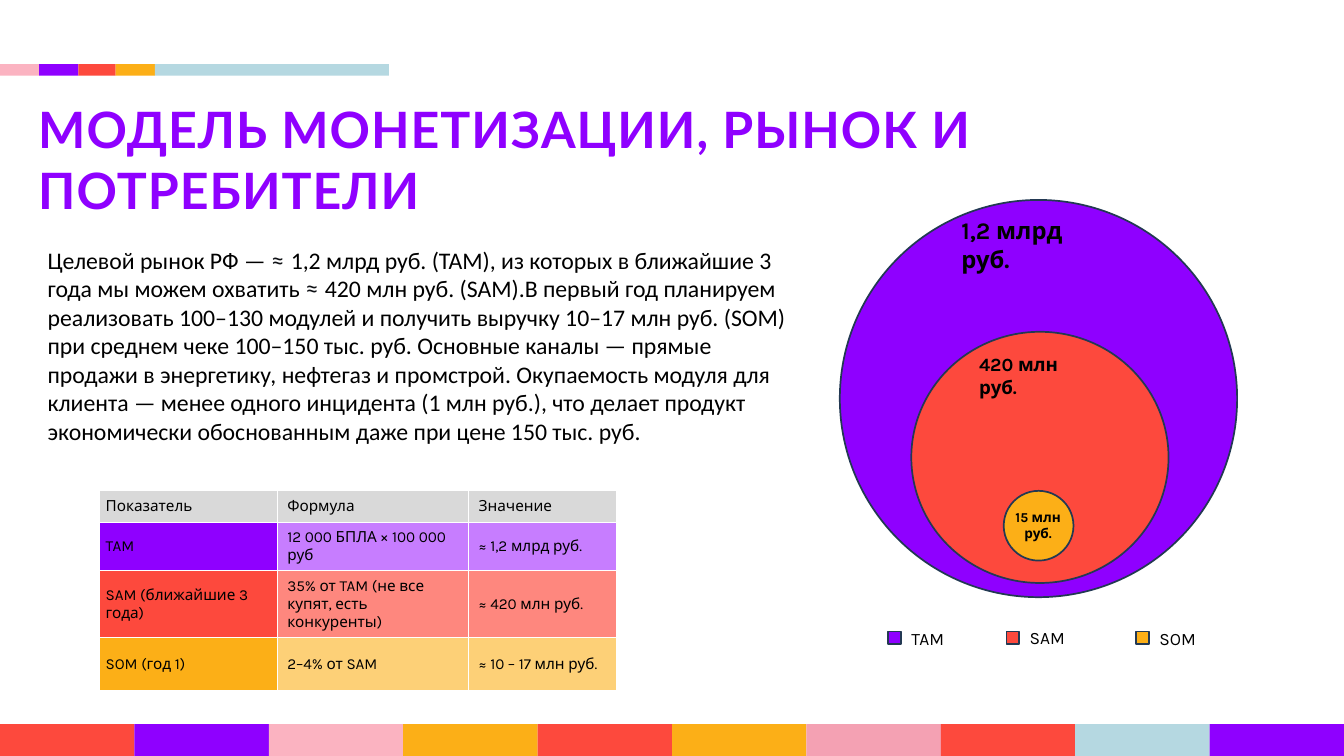
from pptx import Presentation
from pptx.dml.color import RGBColor as RGB
from pptx.enum.shapes import MSO_SHAPE as Kind
from pptx.enum.text import MSO_ANCHOR as Anchor, MSO_AUTO_SIZE as Auto, PP_ALIGN as Align
from pptx.oxml import parse_xml
from pptx.oxml.ns import nsdecls
from pptx.util import Cm, Pt

HUES = {
    "violet": "8F00FF", "red": "FD493D", "amber": "FCAF17",
    "pink": "FBB3C1", "rose": "F4A1B3", "sky": "B5D8E1",
    "lilac": "C77DFF", "coral": "FE877E", "sand": "FDD077",
    "grey": "D9D9D9", "navy": "233953", "white": "FFFFFF",
    "black": "000000", "ink": "0F1115",
}
WIDTH, HEIGHT = 55.85, 31.42

# Stripes: (width, colour) on top, equal tiles at the bottom
TOP = [(1.63, "pink"), (1.63, "violet"), (1.55, "red"), (1.63, "amber"), (9.72, "sky")]
BASE = ["red", "violet", "pink", "amber", "red", "amber", "rose", "red", "sky", "violet"]

# Market circles: left, top, width, height, colour
RINGS = [
    (34.9, 8.31, 16.51, 16.51, "violet"),
    (37.87, 13.79, 10.69, 10.44, "red"),
    (41.71, 20.4, 2.9, 2.9, "amber"),
]
# Circle labels: text, box, size, alignment
SUMS = [
    ("1,2 млрд руб.", (39.7, 8.86, 6.7, 1.45), 28, Align.LEFT),
    ("420 млн руб.", (40.44, 14.55, 5.4, 1.19), 22, Align.LEFT),
    ("15 млн руб.", (41.88, 21.03, 2.52, 1.63), 16, Align.CENTER),
]
# Legend: text, marker left, text top, colour
KEYS = [("TAM", 36.91, 26.09, "violet"), ("SAM", 41.83, 26.04, "red"),
        ("SOM", 47.22, 26.09, "amber")]

# Table rows: texts, height, first fill, other fill
ROWS = [
    (("Показатель", "Формула", "Значение"), 1.29, "grey", "grey"),
    (("TAM", "12 000 БПЛА × 100 000 руб", "≈ 1,2 млрд руб."), 2.03, "violet", "lilac"),
    (("SAM (ближайшие 3 года)", "35% от TAM (не все купят, есть конкуренты)",
      "≈ 420 млн руб."), 2.77, "red", "coral"),
    (("SOM (год 1)", "2–4% от SAM", "≈ 10 – 17 млн руб."), 2.18, "amber", "sand"),
]
COLS = (7.37, 7.95, 6.15)

STORY = [
    "Целевой рынок РФ — ",
    "≈ ",
    "1,2 млрд руб. (TAM), из которых в ближайшие 3 года мы можем охватить ",
    "≈ ",
    "420 млн руб. (SAM).В первый год планируем реализовать 100–130 модулей и получить "
    "выручку 10–17 млн руб. (SOM) при среднем чеке 100–150 тыс. руб. Основные каналы — "
    "прямые продажи в энергетику, нефтегаз и промстрой. Окупаемость модуля для клиента — "
    "менее одного инцидента (1 млн руб.), что делает продукт экономически обоснованным "
    "даже при цене 150 тыс. руб.",
]


def tint(name):
    return RGB.from_string(HUES[name])


def add_run(para, text, size, face, hue="black", bold=False):
    run = para.add_run()
    run.text = text
    for key, val in {"size": Pt(size), "name": face, "bold": bold}.items():
        setattr(run.font, key, val)
    run.font.color.rgb = tint(hue)
    return run


def add_box(slide, box, **look):
    frame = slide.shapes.add_textbox(*map(Cm, box)).text_frame
    for key, val in {"word_wrap": True, "auto_size": Auto.SHAPE_TO_FIT_TEXT, **look}.items():
        setattr(frame, key, val)
    return frame.paragraphs[0]


def add_form(slide, kind, box, hue, edge=None):
    form = slide.shapes.add_shape(kind, *map(Cm, box))
    form.shadow.inherit = False
    form.fill.solid()
    form.fill.fore_color.rgb = tint(hue)
    if edge:
        form.line.color.rgb = tint(edge)
        form.line.width = Pt(2)
    else:
        form.line.fill.background()


def add_stripe(slide, top, height, tiles):
    left = 0
    for width, hue in tiles:
        add_form(slide, Kind.RECTANGLE, (left, top, width, height), hue)
        left += width


def add_key(slide, text, left, top, hue):
    add_form(slide, Kind.RECTANGLE, (left, 26.25, 0.53, 0.53), hue, "navy")
    para = add_box(slide, (left + 0.96, top, 3.5, 0.89), vertical_anchor=Anchor.MIDDLE,
                   margin_left=0, margin_right=0, margin_top=0, margin_bottom=0)
    add_run(para, text, 20.5, "Karla")


def fill_cell(cell, text, hue, pad):
    look = {"vertical_anchor": Anchor.MIDDLE, "margin_left": Cm(pad),
            "margin_right": Cm(0.25), "margin_top": Cm(0.25), "margin_bottom": Cm(0.25)}
    for key, val in look.items():
        setattr(cell, key, val)
    props = cell._tc.get_or_add_tcPr()
    for side in ("lnL", "lnR", "lnT", "lnB"):
        props.append(parse_xml(
            f'<a:{side} {nsdecls("a")} w="12700"><a:solidFill>'
            f'<a:srgbClr val="{HUES["white"]}"/></a:solidFill></a:{side}>'))
    cell.fill.solid()
    cell.fill.fore_color.rgb = tint(hue)
    add_run(cell.text_frame.paragraphs[0], text, 18, "Karla")


def add_grid(slide, left, top):
    high = sum(row[1] for row in ROWS)
    table = slide.shapes.add_table(len(ROWS), len(COLS), Cm(left), Cm(top),
                                   Cm(sum(COLS)), Cm(high)).table
    table.first_row = table.horz_banding = False
    for col, width in zip(table.columns, COLS):
        col.width = Cm(width)
    for row, (texts, height, head, rest) in zip(table.rows, ROWS):
        row.height = Cm(height)
        for num, (cell, text) in enumerate(zip(row.cells, texts)):
            fill_cell(cell, text, rest if num else head, 0.43 if num else 0.25)


def main():
    deck = Presentation()
    deck.slide_width, deck.slide_height = Cm(WIDTH), Cm(HEIGHT)
    slide = deck.slides.add_slide(deck.slide_layouts[6])

    # Colour stripes
    add_stripe(slide, 2.67, 0.48, TOP)
    add_stripe(slide, 30.1, 1.32, [(WIDTH / len(BASE), hue) for hue in BASE])

    # Title
    para = add_box(slide, (1.59, 4.06, 52.17, 5.08), margin_left=0, margin_right=0,
                   margin_top=Cm(0.05), margin_bottom=0)
    run = add_run(para, "МОДЕЛЬ МОНЕТИЗАЦИИ, РЫНОК И ПОТРЕБИТЕЛИ", 59, "Lato", "violet", True)
    run.font._element.set("spc", "120")

    # Story, with the signs in their own font
    para = add_box(slide, (1.73, 10.08, 31.32, 11.02))
    for num, text in enumerate(STORY):
        face, hue = ("Lato", "ink") if num % 2 else ("Calibri", "black")
        add_run(para, text, 28, face, hue)

    # Market circles
    for *box, hue in RINGS:
        add_form(slide, Kind.OVAL, box, hue, "navy")
    for text, box, size, align in SUMS:
        para = add_box(slide, box)
        para.alignment = align
        add_run(para, text, size, "Karla", bold=True)

    # Legend and table
    for key in KEYS:
        add_key(slide, *key)
    add_grid(slide, 4.14, 20.4)

    deck.save("out.pptx")


if __name__ == "__main__":
    main()
